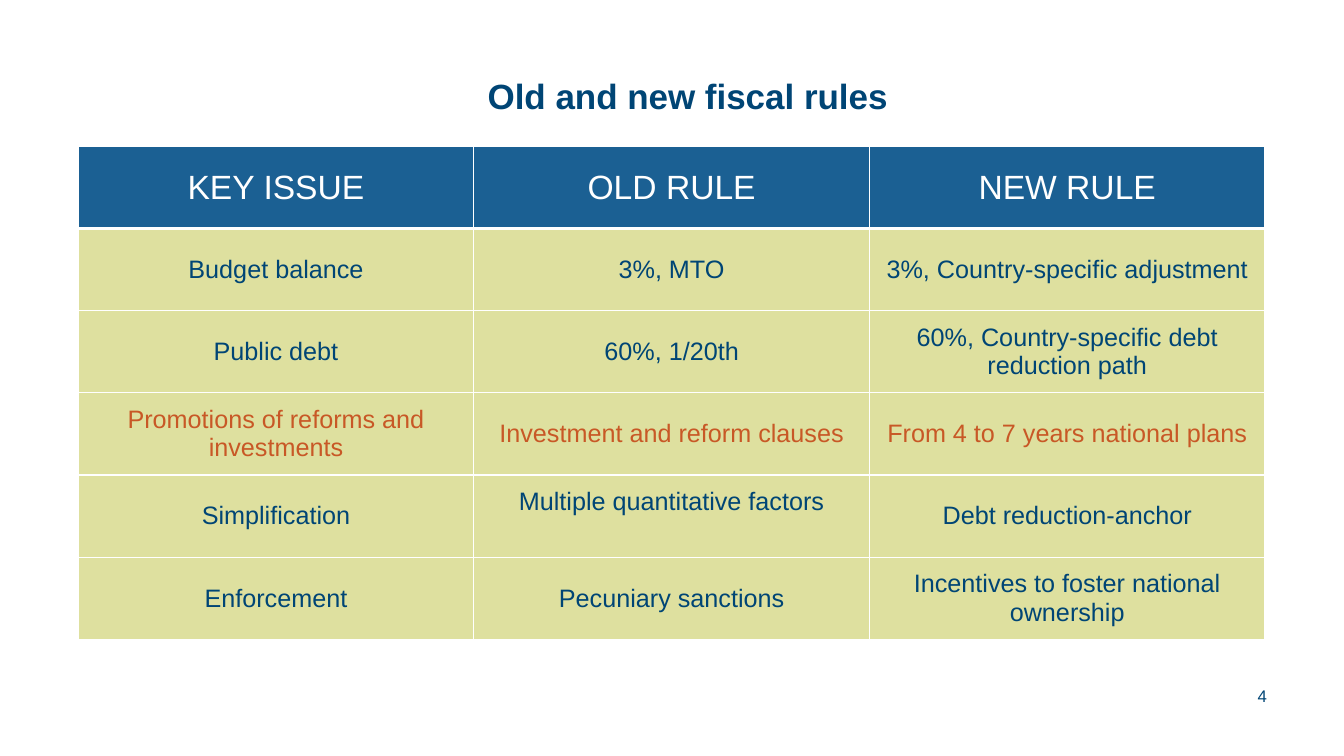
from dataclasses import dataclass

from lxml.etree import SubElement
from pptx import Presentation
from pptx.dml.color import RGBColor
from pptx.enum.text import MSO_ANCHOR as Anchor, PP_ALIGN as Align
from pptx.oxml.ns import qn
from pptx.util import Cm, Pt

NAVY = "004575"
BLUE = "1B6093"
OLIVE = "DEE09F"
ORANGE = "C85826"
WHITE = "FFFFFF"
COL_W = 9.97
ROW_H = 2.07


@dataclass
class Rule:
    texts: tuple[str, str, str]
    color: str = NAVY
    fill: str = OLIVE
    size: float = 18
    bottom_border: float = 1


@dataclass
class Label:
    text: str
    left: float
    top: float
    width: float
    height: float
    size: float
    bold: bool = False
    align: Align = Align.LEFT
    anchor: Anchor = Anchor.TOP
    right_inset: float = 0.25
    spacing: float = 1.0


RULES = [
    Rule(("KEY ISSUE", "OLD RULE", "NEW RULE"), WHITE, BLUE, 24, 3),
    Rule(("Budget balance", "3%, MTO", "3%, Country-specific adjustment")),
    Rule(("Public debt", "60%, 1/20th", "60%, Country-specific debt reduction path")),
    Rule(("Promotions of reforms and investments", "Investment and reform clauses",
          "From 4 to 7 years national plans"), ORANGE),
    Rule(("Simplification", "Multiple quantitative factors", "Debt reduction-anchor")),
    Rule(("Enforcement", "Pecuniary sanctions", "Incentives to foster national ownership")),
]

LABELS = [
    Label("Old and new fiscal rules", 12.04, 1.88, 10.67, 2.18, 25, bold=True, spacing=0.9),
    Label("4", 31.19, 16.89, 1.24, 1.02, 12, align=Align.RIGHT, anchor=Anchor.BOTTOM,
          right_inset=0.5),
]


def rgb(color: str) -> RGBColor:
    return RGBColor.from_string(color)


def style_text(tf, size: float, color: str, align: Align, bold: bool = False) -> None:
    p = tf.paragraphs[0]
    p.alignment = align
    for r in p.runs:
        r.font.name = "Arial"
        r.font.size = Pt(size)
        r.font.bold = bold
        r.font.color.rgb = rgb(color)


def set_borders(cell, bottom: float) -> None:
    tc_pr = cell._tc.get_or_add_tcPr()
    for side, width in (("L", 1), ("R", 1), ("T", 1), ("B", bottom)):
        ln = SubElement(tc_pr, qn(f"a:ln{side}"), w=str(Pt(width)))
        SubElement(SubElement(ln, qn("a:solidFill")), qn("a:srgbClr"), val=WHITE)


def draw_label(s, label: Label) -> None:
    sp = s.shapes.add_textbox(Cm(label.left), Cm(label.top), Cm(label.width), Cm(label.height))
    tf = sp.text_frame
    tf.word_wrap = True
    tf.vertical_anchor = label.anchor
    tf.margin_right = Cm(label.right_inset)
    tf.text = label.text
    tf.paragraphs[0].line_spacing = label.spacing
    style_text(tf, label.size, NAVY, label.align, label.bold)


def draw_rules(s, rules: list[Rule]) -> None:
    cols = len(rules[0].texts)
    table = s.shapes.add_table(len(rules), cols, Cm(1.97), Cm(3.69),
                               Cm(COL_W * cols), Cm(ROW_H * len(rules))).table
    for col in table.columns:
        col.width = Cm(COL_W)
    for row, rule in zip(table.rows, rules):
        row.height = Cm(ROW_H)
        for cell, text in zip(row.cells, rule.texts):
            cell.text_frame.text = text
            cell.vertical_anchor = Anchor.MIDDLE
            style_text(cell.text_frame, rule.size, rule.color, Align.CENTER)
            set_borders(cell, rule.bottom_border)
            cell.fill.solid()
            cell.fill.fore_color.rgb = rgb(rule.fill)
    table.cell(4, 1).margin_bottom = Cm(0.84)


def main() -> None:
    prs = Presentation()
    prs.slide_width, prs.slide_height = Cm(33.87), Cm(19.05)
    s = prs.slides.add_slide(prs.slide_layouts[6])
    draw_rules(s, RULES)
    for label in LABELS:
        draw_label(s, label)
    prs.save("out.pptx")


if __name__ == "__main__":
    main()
